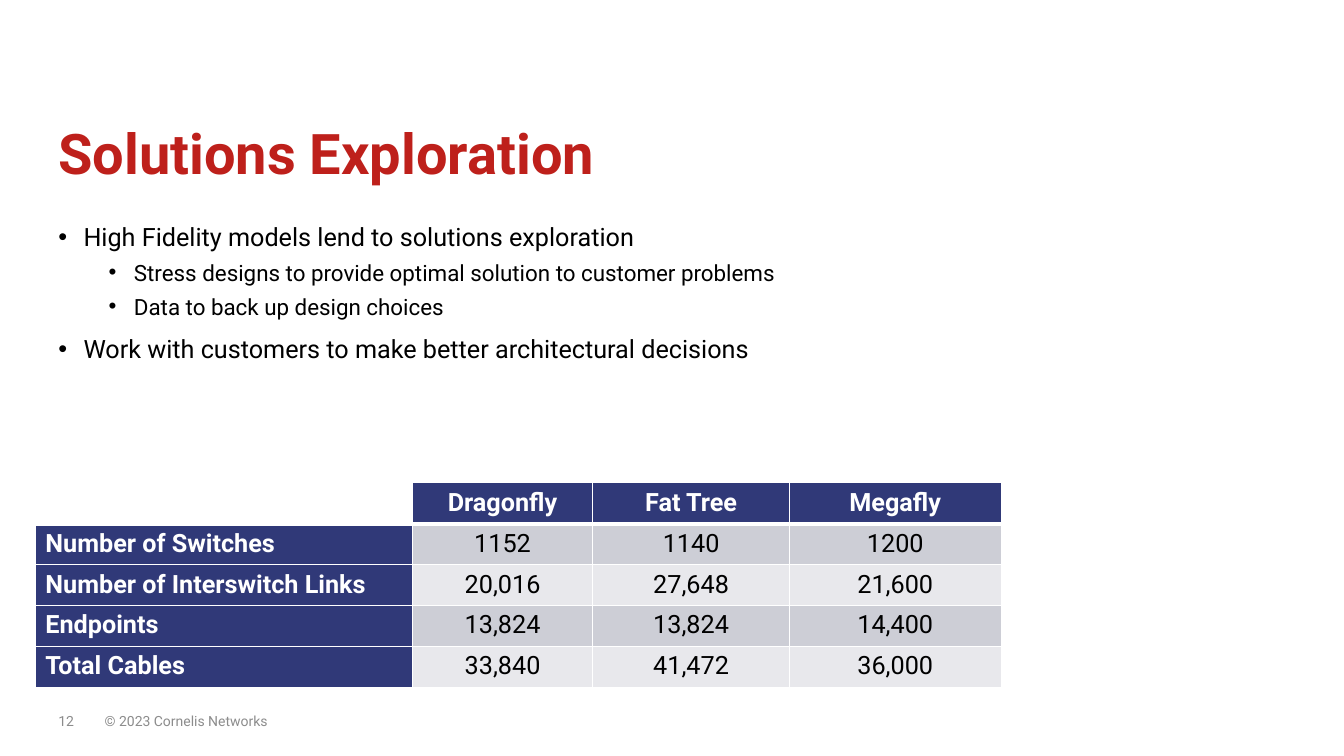
from lxml import etree
from pptx import Presentation
from pptx.dml.color import RGBColor
from pptx.enum import text
from pptx.oxml import ns
from pptx.util import Inches, Pt

NAVY, WHITE, BLACK, RED, GREY = "303978", "FFFFFF", "000000", "BE201B", "8C8C8C"
BANDS = ["CDCED6", "E8E8EC"]


def color(hex_code):
    return RGBColor.from_string(hex_code)


def style(paragraph, size, hex_code, bold=False):
    font = paragraph.font
    font.name, font.size, font.bold = "Roboto", Pt(size), bold
    font.color.rgb = color(hex_code)


deck = Presentation()
deck.slide_width, deck.slide_height = Inches(13.33), Inches(7.5)
slide = deck.slides.add_slide(deck.slide_layouts[6])

# Title, page number and copyright line
for words, left, top, width, height, size, hex_code, bold in [
    ("Solutions Exploration", 0.48, 0.83, 9.44, 1.45, 40, RED, True),
    ("12", 0.48, 6.95, 0.46, 0.4, 10, GREY, False),
    ("© 2023 Cornelis Networks", 0.94, 6.95, 4.5, 0.4, 10, GREY, False),
]:
    frame = slide.shapes.add_textbox(
        Inches(left), Inches(top), Inches(width), Inches(height)).text_frame
    frame.word_wrap = True
    frame.vertical_anchor = text.MSO_ANCHOR.MIDDLE
    line = frame.paragraphs[0]
    line.text = words
    if bold:
        line.line_spacing = 0.9
    style(line, size, hex_code, bold)

# Bulleted points
points = slide.shapes.add_textbox(
    Inches(0.48), Inches(2.15), Inches(7.55), Inches(3.79)).text_frame
points.word_wrap = True
for i, (level, words) in enumerate([
    (0, "High Fidelity models lend to solutions exploration"),
    (1, "Stress designs to provide optimal solution to customer problems"),
    (1, "Data to back up design choices"),
    (0, "Work with customers to make better architectural decisions"),
]):
    point = points.add_paragraph() if i else points.paragraphs[0]
    point.text = words
    point.level = level
    if i:
        point.space_before = Pt(5 if level else 10)
    properties = point._p.get_or_add_pPr()
    properties.set("marL", str(Inches(0.25 + 0.5 * level)))
    properties.set("indent", str(Inches(-0.25)))
    etree.SubElement(properties, ns.qn("a:buFont")).set("typeface", "Arial")
    etree.SubElement(properties, ns.qn("a:buChar")).set("char", "•")
    style(point, 16 if level else 18, BLACK)

# Topology comparison table
topologies = [
    ["", "Dragonfly", "Fat Tree", "Megafly"],
    ["Number of Switches", "1152", "1140", "1200"],
    ["Number of Interswitch Links", "20,016", "27,648", "21,600"],
    ["Endpoints", "13,824", "13,824", "14,400"],
    ["Total Cables", "33,840", "41,472", "36,000"],
]
table = slide.shapes.add_table(
    5, 4, Inches(0.35), Inches(4.79), Inches(9.58), Inches(2.03)).table
for column, width in zip(table.columns, [3.74, 1.79, 1.95, 2.1]):
    column.width = Inches(width)

for r, row in enumerate(topologies):
    for c, words in enumerate(row):
        cell = table.cell(r, c)
        heading = r == 0 or c == 0
        if words:
            cell.fill.solid()
            cell.fill.fore_color.rgb = color(NAVY if heading else BANDS[(r - 1) % 2])
        else:
            cell.fill.background()
        entry = cell.text_frame.paragraphs[0]
        entry.text = words
        entry.alignment = text.PP_ALIGN.CENTER if c else text.PP_ALIGN.LEFT
        style(entry, 18, WHITE if heading else BLACK, heading)

        # White borders, thicker below the header row
        thick_side = {0: "lnB", 1: "lnT"}.get(r)
        cell_properties = cell._tc.get_or_add_tcPr()
        for position, side in enumerate(["lnL", "lnR", "lnT", "lnB"]):
            border = etree.Element(ns.qn("a:" + side))
            border.set("w", str(Pt(3 if side == thick_side else 1)))
            paint = etree.SubElement(border, ns.qn("a:solidFill"))
            etree.SubElement(paint, ns.qn("a:srgbClr")).set("val", WHITE)
            cell_properties.insert(position, border)

deck.save("out.pptx")
